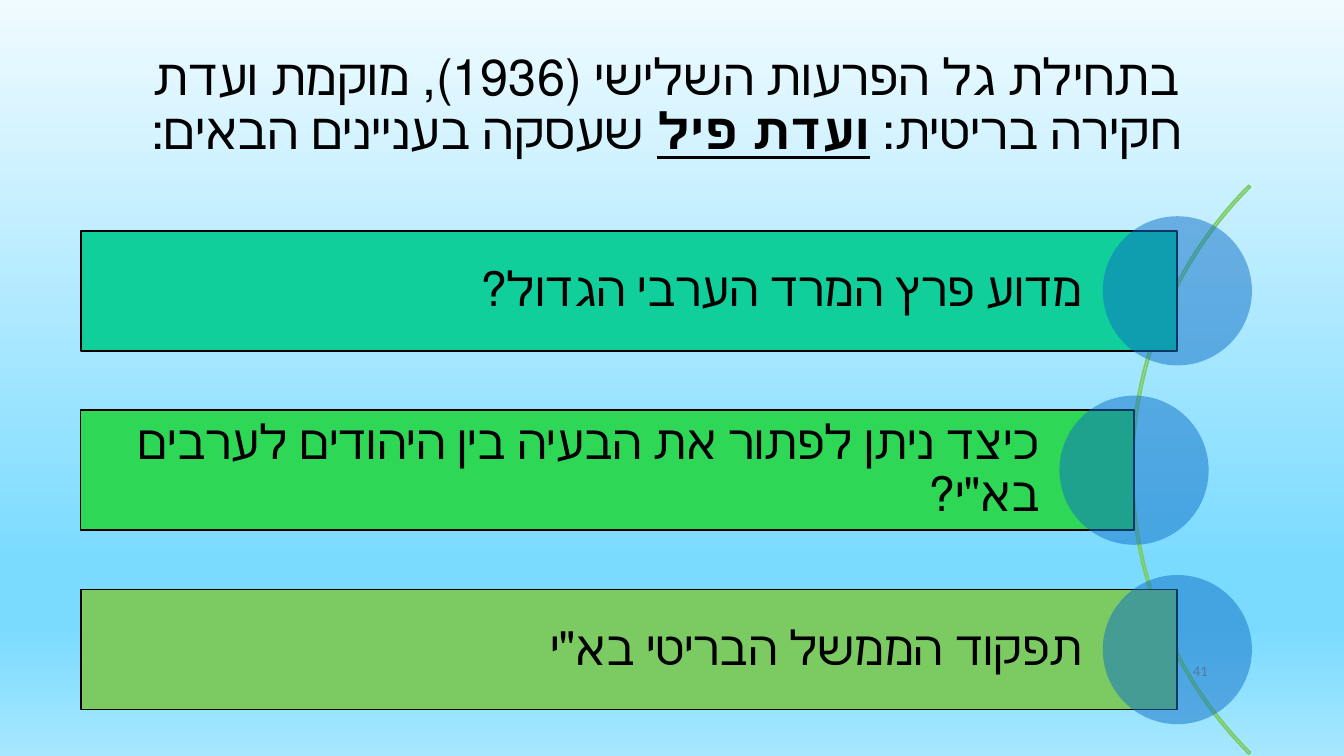
from copy import deepcopy
from dataclasses import dataclass

from pptx import Presentation
from pptx.dml.color import RGBColor
from pptx.enum.shapes import MSO_SHAPE
from pptx.enum.text import MSO_ANCHOR, PP_ALIGN
from pptx.oxml.ns import qn
from pptx.oxml.xmlchemy import OxmlElement
from pptx.util import Emu, Inches, Pt

RECTANGLE, OVAL, BLOCK_ARC = MSO_SHAPE.RECTANGLE, MSO_SHAPE.OVAL, MSO_SHAPE.BLOCK_ARC
MIDDLE = MSO_ANCHOR.MIDDLE
CENTER, RIGHT = PP_ALIGN.CENTER, PP_ALIGN.RIGHT

BLACK = RGBColor(0x00, 0x00, 0x00)
GREY = RGBColor(0x89, 0x89, 0x89)
BLUE = RGBColor(0x0F, 0x6F, 0xC6)
TEAL = RGBColor(0x10, 0xCF, 0x9B)
GREEN = RGBColor(0x2F, 0xD7, 0x57)
OLIVE = RGBColor(0x7C, 0xCA, 0x62)
SKY = RGBColor(0x7B, 0xDB, 0xFF)
SKY_STOPS = (
    (0, RGBColor(0xF0, 0xFB, 0xFF)),
    (0.74, SKY),
    (0.83, SKY),
    (1, RGBColor(0xA7, 0xE7, 0xFF)),
)

FONT = "Calibri"
SLIDE_WIDTH, SLIDE_HEIGHT = Inches(13.333), Inches(7.5)

# The grid has 100 columns and 100 rows.
BAR_LEFT, BAR_TOP, BAR_HEIGHT, BAR_PITCH = 6, 30.53, 15.87, 23.73
CIRCLE_WIDTH, CIRCLE_HEIGHT = 11.1, 19.73


@dataclass(frozen=True)
class Question:
    text: str
    color: RGBColor
    right: float


QUESTIONS = (
    Question("מדוע פרץ המרד הערבי הגדול?", TEAL, 87.6),
    Question('כיצד ניתן לפתור את הבעיה בין היהודים לערבים בא"י?', GREEN, 84.38),
    Question('תפקוד הממשל הבריטי בא"י', OLIVE, 87.6),
)


def grid_box(left: float, top: float, width: float, height: float) -> tuple[Emu, ...]:
    """Turn grid columns and rows into slide lengths."""
    column, row = SLIDE_WIDTH / 100, SLIDE_HEIGHT / 100
    return Emu(left * column), Emu(top * row), Emu(width * column), Emu(height * row)


def add_plain_shape(slide, kind, box, fill=None, line=None):
    shape = slide.shapes.add_shape(kind, *box)
    shape.shadow.inherit = False
    if fill is None:
        shape.fill.background()
    else:
        shape.fill.solid()
        shape.fill.fore_color.rgb = fill
    if line is None:
        shape.line.fill.background()
    else:
        shape.line.color.rgb = line
        shape.line.width = Pt(1.25)
    return shape


def format_hebrew(paragraph, size: float, alignment) -> None:
    paragraph.alignment = alignment
    paragraph.line_spacing = 0.9
    paragraph.font.size = Pt(size)
    paragraph.font.name = FONT
    paragraph.font.color.rgb = BLACK
    paragraph._p.get_or_add_pPr().set("rtl", "1")


def paint_background(slide) -> None:
    fill = slide.background.fill
    fill.gradient()
    fill.gradient_angle = 270
    stop_list = slide.element.find(".//" + qn("a:gsLst"))
    while len(stop_list) < len(SKY_STOPS):
        stop_list.append(deepcopy(stop_list[0]))
    for stop, (position, color) in zip(fill.gradient_stops, SKY_STOPS):
        stop.position = position
        stop.color.rgb = color


def write_title(slide) -> None:
    title = slide.shapes.title
    title.left, title.top, title.width, title.height = grid_box(5.4, 2, 88.35, 24.13)
    frame = title.text_frame
    frame.word_wrap = True
    frame.vertical_anchor = MIDDLE
    paragraph = frame.paragraphs[0]
    paragraph.add_run().text = "בתחילת גל הפרעות השלישי (1936), מוקמת ועדת חקירה בריטית: "
    commission = paragraph.add_run()
    commission.text = "ועדת פיל"
    commission.font.bold = commission.font.underline = True
    paragraph.add_run().text = " שעסקה בעניינים הבאים:"
    format_hebrew(paragraph, 36, CENTER)


def add_slide_number(slide) -> None:
    text_box = slide.shapes.add_textbox(*grid_box(80, 86, 10.6, 5.3))
    frame = text_box.text_frame
    frame.word_wrap = True
    frame.vertical_anchor = MIDDLE
    paragraph = frame.paragraphs[0]
    paragraph.text = "41"
    paragraph.alignment = RIGHT
    paragraph.font.size = Pt(10.5)
    paragraph.font.name = FONT
    paragraph.font.color.rgb = GREY


def add_arc(slide) -> None:
    arc = add_plain_shape(slide, BLOCK_ARC, grid_box(84.15, 8.93, 59.85, 106.4), line=OLIVE)
    for index, value in enumerate((81, 135, 0.003)):
        arc.adjustments[index] = value


def add_question(slide, question: Question, top: float) -> None:
    """Draw a bar and a translucent circle centred on its right edge."""
    box = grid_box(BAR_LEFT, top, question.right - BAR_LEFT, BAR_HEIGHT)
    bar = add_plain_shape(slide, RECTANGLE, box, question.color, BLACK)
    frame = bar.text_frame
    frame.word_wrap = True
    frame.vertical_anchor = MIDDLE
    frame.margin_left = frame.margin_top = frame.margin_bottom = Inches(0.09)
    frame.margin_right = Inches(0.94)
    paragraph = frame.paragraphs[0]
    paragraph.text = question.text
    format_hebrew(paragraph, 34, RIGHT)

    circle_box = grid_box(
        question.right - CIRCLE_WIDTH / 2,
        top + (BAR_HEIGHT - CIRCLE_HEIGHT) / 2,
        CIRCLE_WIDTH,
        CIRCLE_HEIGHT,
    )
    circle = add_plain_shape(slide, OVAL, circle_box, BLUE)
    alpha = OxmlElement("a:alpha")
    alpha.set("val", "50000")
    circle.element.spPr.find(qn("a:solidFill"))[0].append(alpha)


def main() -> None:
    presentation = Presentation()
    presentation.slide_width, presentation.slide_height = SLIDE_WIDTH, SLIDE_HEIGHT
    slide = presentation.slides.add_slide(presentation.slide_layouts[5])
    paint_background(slide)
    write_title(slide)
    add_slide_number(slide)
    add_arc(slide)
    for index, question in enumerate(QUESTIONS):
        add_question(slide, question, BAR_TOP + index * BAR_PITCH)
    presentation.save("out.pptx")


if __name__ == "__main__":
    main()
